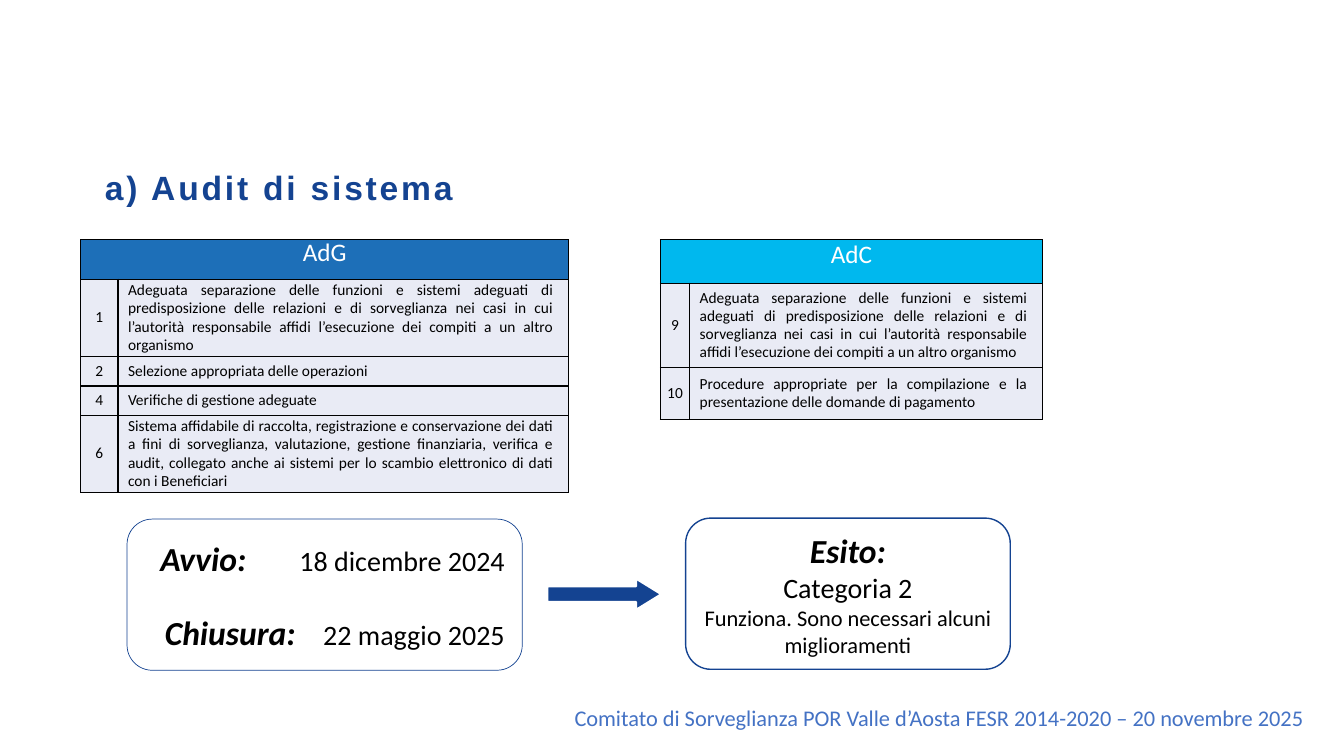
"""Build the slide on the system audit, with its two requirement tables and the outcome."""
from lxml.etree import SubElement
from pptx import Presentation
from pptx.dml.color import RGBColor
from pptx.enum.shapes import MSO_SHAPE
from pptx.enum.text import MSO_ANCHOR, MSO_AUTO_SIZE, PP_ALIGN
from pptx.oxml.ns import qn
from pptx.util import Inches, Pt

COLORS = {
    "navy": "144391", "blue": "1D6FB8", "cyan": "00B8EE", "pale": "E9EBF5",
    "footer": "4472C4", "white": "FFFFFF", "black": "000000",
}
LABEL = {"size": Pt(24), "bold": True, "italic": True}
DATE = {"size": Pt(20)}
SEPARATION = (
    "Adeguata separazione delle funzioni e sistemi adeguati di predisposizione delle "
    "relazioni e di sorveglianza nei casi in cui l’autorità responsabile affidi "
    "l’esecuzione dei compiti a un altro organismo"
)
DATA_SYSTEM = (
    "Sistema affidabile di raccolta, registrazione e conservazione dei dati a fini di "
    "sorveglianza, valutazione, gestione finanziaria, verifica e audit, collegato anche ai "
    "sistemi per lo scambio elettronico di dati con i Beneficiari"
)
PAYMENTS = (
    "Procedure appropriate per la compilazione e la presentazione delle domande di pagamento"
)


def rgb(name):
    return RGBColor.from_string(COLORS[name])


def add_span(para, text, color, formats):
    span = para.add_run()
    span.text = text
    span.font.color.rgb = rgb(color)
    for name, value in {"name": "Calibri", **formats}.items():
        setattr(span.font, name, value)
    return span


deck = Presentation()
deck.slide_width, deck.slide_height = Inches(13.33), Inches(7.5)
page = deck.slides.add_slide(deck.slide_layouts[5])

title = page.shapes.title
title.left, title.top, title.width, title.height = map(Inches, (0.94, 1.61, 8.18, 0.5))
title.text_frame.vertical_anchor = MSO_ANCHOR.TOP
title.text_frame.auto_size = MSO_AUTO_SIZE.SHAPE_TO_FIT_TEXT
para = title.text_frame.paragraphs[0]
para.alignment = PP_ALIGN.LEFT
span = add_span(para, "a) Audit di sistema", "navy",
                {"name": "Arial", "size": Pt(24), "bold": True})
span.font._element.set("spc", "200")

tables = [
    ("AdG", "blue", 0.8, (0.37, 4.47), (0.39, 0.77, 0.29, 0.29, 0.77), [
        ("1", SEPARATION),
        ("2", "Selezione appropriata delle operazioni"),
        ("4", "Verifiche di gestione adeguate"),
        ("6", DATA_SYSTEM),
    ]),
    ("AdC", "cyan", 6.55, (0.29, 3.5), (0.43, 0.84, 0.51), [
        ("9", SEPARATION),
        ("10", PAYMENTS),
    ]),
]
for heading, heading_color, left, widths, heights, requirements in tables:
    table = page.shapes.add_table(
        len(heights), len(widths), Inches(left), Inches(2.38),
        Inches(sum(widths)), Inches(sum(heights))).table
    table.first_row = table.horz_banding = False
    for column, width in zip(table.columns, widths):
        column.width = Inches(width)
    for row, height in zip(table.rows, heights):
        row.height = Inches(height)
    table.cell(0, 0).merge(table.cell(0, 1))
    for row_index, texts in enumerate([(heading, ""), *requirements]):
        for column_index, text in enumerate(texts):
            cell = table.cell(row_index, column_index)
            is_heading = row_index == 0
            is_body = column_index == 1 and not is_heading
            layout = {
                "vertical_anchor": MSO_ANCHOR.MIDDLE,
                "margin_left": Inches(0.1 if is_body else 0.02),
                "margin_right": Inches(0.15 if is_body else 0.02),
                "margin_top": Inches(0.02 if is_body else 0),
                "margin_bottom": Inches(0.02 if is_body else 0),
            }
            for name, value in layout.items():
                setattr(cell, name, value)
            properties = cell._tc.get_or_add_tcPr()
            for side in ("a:lnL", "a:lnR", "a:lnT", "a:lnB"):
                border = SubElement(properties, qn(side), w=str(Pt(1)))
                fill = SubElement(border, qn("a:solidFill"))
                SubElement(fill, qn("a:srgbClr"), val=COLORS["black"])
            cell.fill.solid()
            cell.fill.fore_color.rgb = rgb(heading_color if is_heading else "pale")
            if text:
                para = cell.text_frame.paragraphs[0]
                para.alignment = PP_ALIGN.JUSTIFY if is_body else PP_ALIGN.CENTER
                para.line_spacing = Pt(13)
                add_span(para, text, "white" if is_heading else "black",
                         {"size": Pt(18 if is_heading else 11)})

cards = [
    ((1.26, 5.15, 3.92, 1.5), 0.5, PP_ALIGN.RIGHT, 24, [
        ((1.38,), [("Avvio:", LABEL), (" \t18 dicembre 2024", DATE)]),
        ((0.1, 1.57), [("Chiusura:\t", LABEL), ("22 maggio 2025", DATE)]),
    ]),
    ((6.8, 5.14, 3.22, 1.5), 1, PP_ALIGN.CENTER, 0, [
        ((), [("Esito:", LABEL)]),
        ((), [("Categoria 2", DATE)]),
        ((), [("Funziona. Sono necessari alcuni miglioramenti", {"size": Pt(16)})]),
    ]),
]
for place, line_width, alignment, gap, lines in cards:
    box = page.shapes.add_shape(MSO_SHAPE.ROUNDED_RECTANGLE, *map(Inches, place))
    box.shadow.inherit = False
    box.fill.solid()
    box.fill.fore_color.rgb = rgb("white")
    box.line.color.rgb = rgb("navy")
    box.line.width = Pt(line_width)
    frame = box.text_frame
    frame.word_wrap = True
    frame.vertical_anchor = MSO_ANCHOR.MIDDLE
    for index, (tabs, spans) in enumerate(lines):
        para = frame.add_paragraph() if index else frame.paragraphs[0]
        if tabs:
            tab_list = SubElement(para._p.get_or_add_pPr(), qn("a:tabLst"))
            for position in tabs:
                SubElement(tab_list, qn("a:tab"), pos=str(Inches(position)), algn="l")
        para.alignment = alignment
        if index and gap:
            para.space_before = Pt(gap)
        for text, formats in spans:
            add_span(para, text, "black", formats)

arrow = page.shapes.add_shape(
    MSO_SHAPE.RIGHT_ARROW, *map(Inches, (5.43, 5.74, 1.13, 0.31)))
arrow.shadow.inherit = False
arrow.adjustments[1] = 0.81
arrow.fill.solid()
arrow.fill.fore_color.rgb = rgb("navy")
arrow.line.color.rgb = rgb("white")
arrow.line.width = Pt(1.5)

footer = page.shapes.add_textbox(*map(Inches, (5.6, 6.94, 7.54, 0.37)))
footer.text_frame.word_wrap = True
footer.text_frame.auto_size = MSO_AUTO_SIZE.SHAPE_TO_FIT_TEXT
add_span(footer.text_frame.paragraphs[0],
         "Comitato di Sorveglianza POR Valle d’Aosta FESR 2014-2020 – 20 novembre 2025",
         "footer", {"size": Pt(16)})

deck.save("out.pptx")
